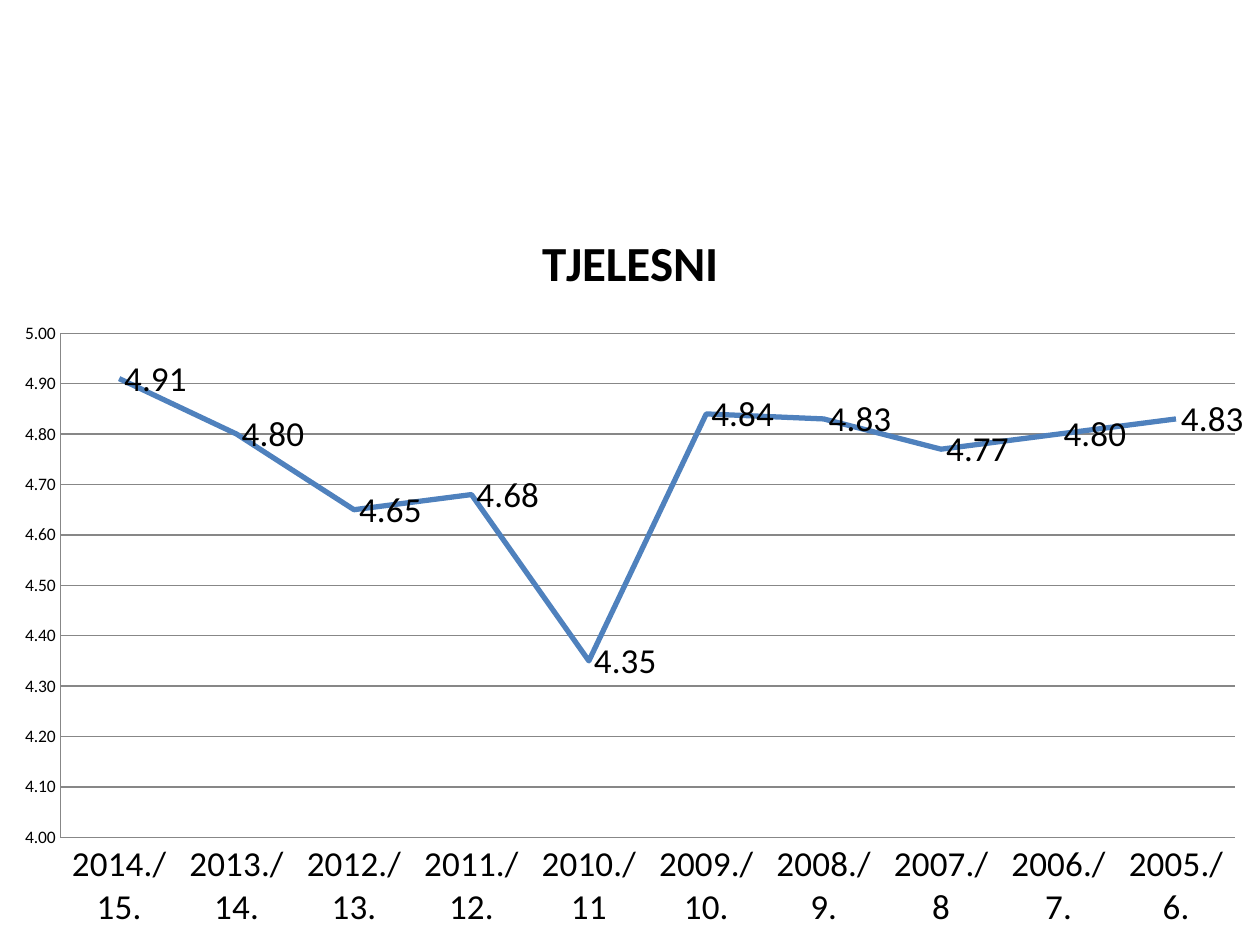
from lxml import etree
from pptx import Presentation
from pptx import util as u
from pptx.chart.data import CategoryChartData
from pptx.dml.color import RGBColor
from pptx.enum import chart as ch
from pptx.oxml.ns import qn

GRADES = {
    "2014./15.": 4.91,
    "2013./14.": 4.80,
    "2012./13.": 4.65,
    "2011./12.": 4.68,
    "2010./11": 4.35,
    "2009./10.": 4.84,
    "2008./9.": 4.83,
    "2007./8": 4.77,
    "2006./7.": 4.80,
    "2005./6.": 4.83,
}
GRADE_FORMAT = "0.00"


def color(hex_string):
    return RGBColor.from_string(hex_string)


def format_font(font, size, bold=False, ink="000000"):
    font.name = "Calibri"
    font.size = u.Pt(size)
    font.bold = bold
    font.color.rgb = color(ink)


def write_text(frame, wording, **style):
    run = frame.paragraphs[0].add_run()
    run.text = wording
    format_font(run.font, **style)


def format_line(line, ink, width):
    line.color.rgb = color(ink)
    line.width = u.Pt(width)


def place_plot(chart, **box):
    plot_area = chart.element.find(".//" + qn("c:plotArea"))
    for automatic in plot_area.findall(qn("c:layout")):
        plot_area.remove(automatic)
    layout = etree.Element(qn("c:layout"))
    manual = etree.SubElement(layout, qn("c:manualLayout"))
    settings = {"layoutTarget": "inner", "xMode": "edge", "yMode": "edge", **box}
    for tag, value in settings.items():
        etree.SubElement(manual, qn(f"c:{tag}")).set("val", str(value))
    plot_area.insert(0, layout)


def format_axis(axis, size):
    axis.major_tick_mark = axis.minor_tick_mark = ch.XL_TICK_MARK.NONE
    format_font(axis.tick_labels.font, size)
    format_line(axis.format.line, "878787", 0.75)


def format_grade_axis(axis):
    format_axis(axis, 10)
    axis.minimum_scale, axis.maximum_scale, axis.major_unit = 4, 5, 0.1
    axis.tick_labels.number_format = GRADE_FORMAT
    axis.tick_labels.number_format_is_linked = False
    axis.has_major_gridlines = True
    format_line(axis.major_gridlines.format.line, "878787", 0.75)


def format_grades(series):
    series.smooth = False
    series.marker.style = ch.XL_MARKER_STYLE.NONE
    format_line(series.format.line, "4F81BD", 3)
    labels = series.data_labels
    labels.show_value = True
    labels.position = ch.XL_LABEL_POSITION.RIGHT
    labels.number_format = GRADE_FORMAT
    labels.number_format_is_linked = False
    format_font(labels.font, 20)


def add_grade_chart(slide, heading):
    grades = CategoryChartData(number_format=GRADE_FORMAT)
    grades.categories = list(GRADES)
    grades.add_series("Series 1", list(GRADES.values()))
    chart = slide.shapes.add_chart(
        ch.XL_CHART_TYPE.LINE, u.Inches(0), u.Inches(1.58),
        u.Inches(10), u.Inches(5.92), grades,
    ).chart
    format_font(chart.font, 10)
    chart.has_legend = False
    chart.has_title = True
    write_text(chart.chart_title.text_frame, heading, size=28, bold=True)
    chart.chart_title.include_in_layout = False
    chart.plots[0].vary_by_categories = False
    place_plot(chart, x=0.048, y=0.18, w=0.932, h=0.676)
    format_axis(chart.category_axis, 20)
    format_grade_axis(chart.value_axis)
    format_grades(chart.plots[0].series[0])


def main():
    deck = Presentation()
    deck.slide_width, deck.slide_height = u.Inches(10), u.Inches(7.5)
    slide = deck.slides.add_slide(deck.slide_layouts[6])
    add_grade_chart(slide, "TJELESNI")
    deck.save("out.pptx")


if __name__ == "__main__":
    main()
